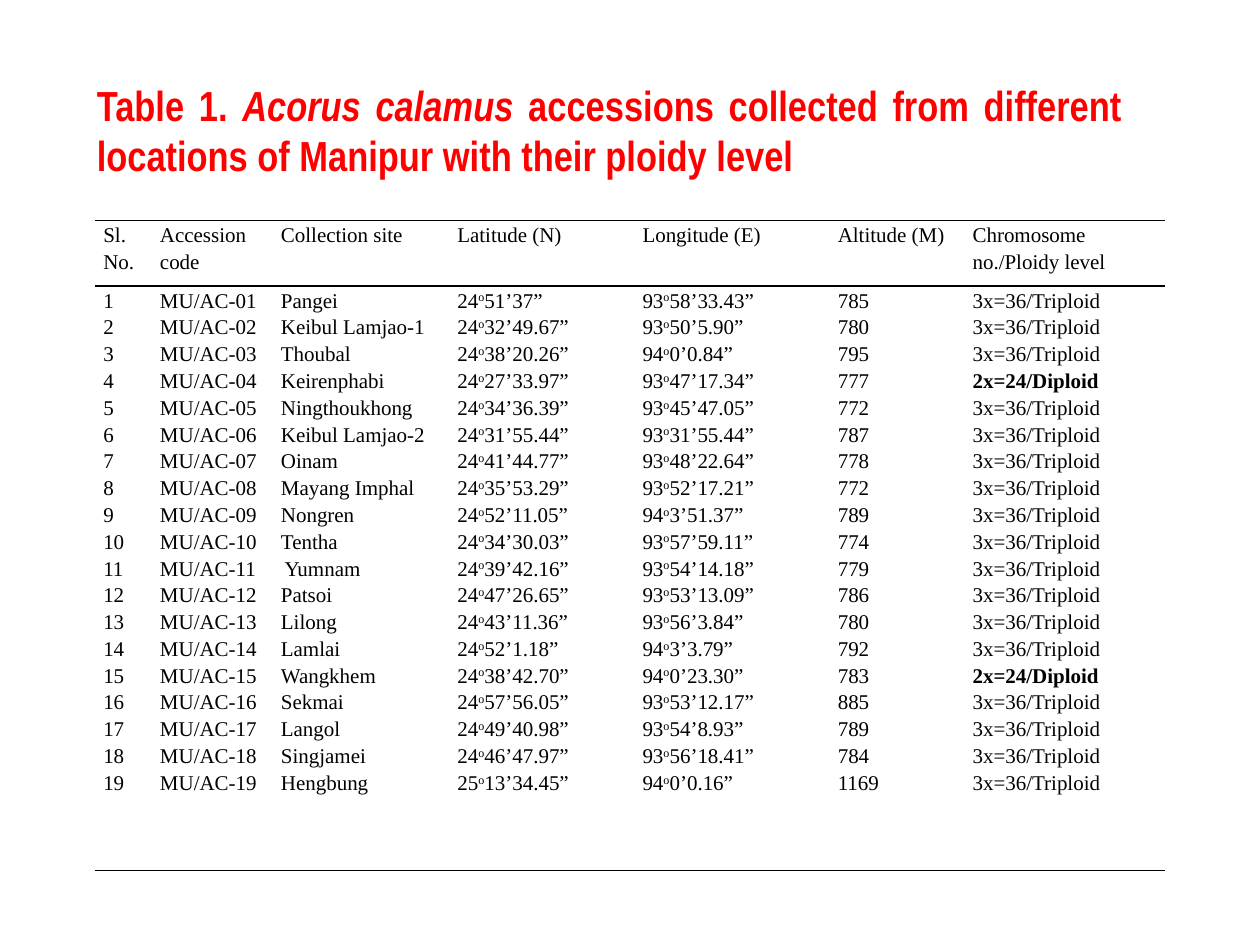
import pptx
import pptx.dml.color
import pptx.enum.text
import pptx.oxml.ns
import pptx.util
from lxml import etree
from pptx.util import Inches

RED = pptx.dml.color.RGBColor(0xFF, 0, 0)
BLACK = pptx.dml.color.RGBColor(0, 0, 0)
JUST = pptx.enum.text.PP_ALIGN.JUSTIFY

TITLE = [
    ("Table 1. ", False),
    ("Acorus calamus", True),
    (" accessions collected from different locations of Manipur with their ploidy level", False),
]
HEADS = ["Sl. No.", "Accession code", "Collection site", "Latitude (N)",
         "Longitude (E)", "Altitude (M)", "Chromosome no./Ploidy level"]
WIDTHS = [0.45, 0.96, 1.4, 1.47, 1.55, 1.07, 1.6]
HEIGHTS = [0.52, 4.64]
SITES = [
    ("Pangei", "24o51’37”", "93o58’33.43”", 785),
    ("Keibul Lamjao-1", "24o32’49.67”", "93o50’5.90”", 780),
    ("Thoubal", "24o38’20.26”", "94o0’0.84”", 795),
    ("Keirenphabi", "24o27’33.97”", "93o47’17.34”", 777),
    ("Ningthoukhong", "24o34’36.39”", "93o45’47.05”", 772),
    ("Keibul Lamjao-2", "24o31’55.44”", "93o31’55.44”", 787),
    ("Oinam", "24o41’44.77”", "93o48’22.64”", 778),
    ("Mayang Imphal", "24o35’53.29”", "93o52’17.21”", 772),
    ("Nongren", "24o52’11.05”", "94o3’51.37”", 789),
    ("Tentha", "24o34’30.03”", "93o57’59.11”", 774),
    ("Yumnam", "24o39’42.16”", "93o54’14.18”", 779),
    ("Patsoi", "24o47’26.65”", "93o53’13.09”", 786),
    ("Lilong", "24o43’11.36”", "93o56’3.84”", 780),
    ("Lamlai", "24o52’1.18”", "94o3’3.79”", 792),
    ("Wangkhem", "24o38’42.70”", "94o0’23.30”", 783),
    ("Sekmai", "24o57’56.05”", "93o53’12.17”", 885),
    ("Langol", "24o49’40.98”", "93o54’8.93”", 789),
    ("Singjamei", "24o46’47.97”", "93o56’18.41”", 784),
    ("Hengbung", "25o13’34.45”", "94o0’0.16”", 1169),
]
DIPLOID = {"Keirenphabi", "Wangkhem"}
INDENT = {"Yumnam": 0.03}
ANGLES = {3, 4}


def style(run, font, size, color, bold=False, italic=False):
    run.font.name = font
    run.font.size = pptx.util.Pt(size)
    run.font.color.rgb = color
    run.font.bold = bold
    run.font.italic = italic


def rule(cell):
    props = cell._tc.get_or_add_tcPr()
    for side in "LRTB":
        line = etree.SubElement(props, pptx.oxml.ns.qn("a:ln" + side), w="12700")
        if side in "LR":
            etree.SubElement(line, pptx.oxml.ns.qn("a:noFill"))
        else:
            fill = etree.SubElement(line, pptx.oxml.ns.qn("a:solidFill"))
            etree.SubElement(fill, pptx.oxml.ns.qn("a:srgbClr"), val=str(BLACK))
    cell.fill.background()


def write(para, text, angle):
    para.alignment = JUST
    para.line_spacing = 1.15
    if text in INDENT:
        para._p.get_or_add_pPr().set("indent", str(Inches(INDENT[text])))
    for part in text.partition("o") if angle else [text]:
        run = para.add_run()
        run.text = part
        style(run, "Times New Roman", 12, BLACK, bold=text.startswith("2x"))
        if angle and part == "o":
            run.font._element.set("baseline", "30000")


def fill_cell(cell, lines, angle=False):
    cell.margin_left = cell.margin_right = Inches(0.07)
    cell.margin_top = cell.margin_bottom = 0
    rule(cell)
    frame = cell.text_frame
    for i, text in enumerate(lines):
        write(frame.add_paragraph() if i else frame.paragraphs[0], text, angle)


def add_grid(slide):
    frame = slide.shapes.add_table(2, len(HEADS), Inches(0.75), Inches(1.75),
                                   Inches(sum(WIDTHS)), Inches(sum(HEIGHTS)))
    table = frame.table
    table.first_row = table.horz_banding = False
    for row, high in zip(table.rows, HEIGHTS):
        row.height = Inches(high)
    rows = [
        (str(i), f"MU/AC-{i:02}", site, lat, lon, str(alt),
         "2x=24/Diploid" if site in DIPLOID else "3x=36/Triploid")
        for i, (site, lat, lon, alt) in enumerate(SITES, 1)
    ]
    for i, (head, lines) in enumerate(zip(HEADS, zip(*rows))):
        table.columns[i].width = Inches(WIDTHS[i])
        fill_cell(table.cell(0, i), [head])
        fill_cell(table.cell(1, i), lines, i in ANGLES)


def add_title(slide):
    box = slide.shapes.add_textbox(Inches(0.67), Inches(0.58), Inches(8.33), Inches(0.91))
    frame = box.text_frame
    frame.word_wrap = True
    frame.auto_size = pptx.enum.text.MSO_AUTO_SIZE.SHAPE_TO_FIT_TEXT
    para = frame.paragraphs[0]
    para.alignment = JUST
    for text, italic in TITLE:
        run = para.add_run()
        run.text = text
        style(run, "Arial Narrow", 24, RED, True, italic)


def main():
    deck = pptx.Presentation()
    deck.slide_width, deck.slide_height = Inches(10), Inches(7.5)
    slide = deck.slides.add_slide(deck.slide_layouts[6])
    add_grid(slide)
    add_title(slide)
    deck.save("out.pptx")


if __name__ == "__main__":
    main()
